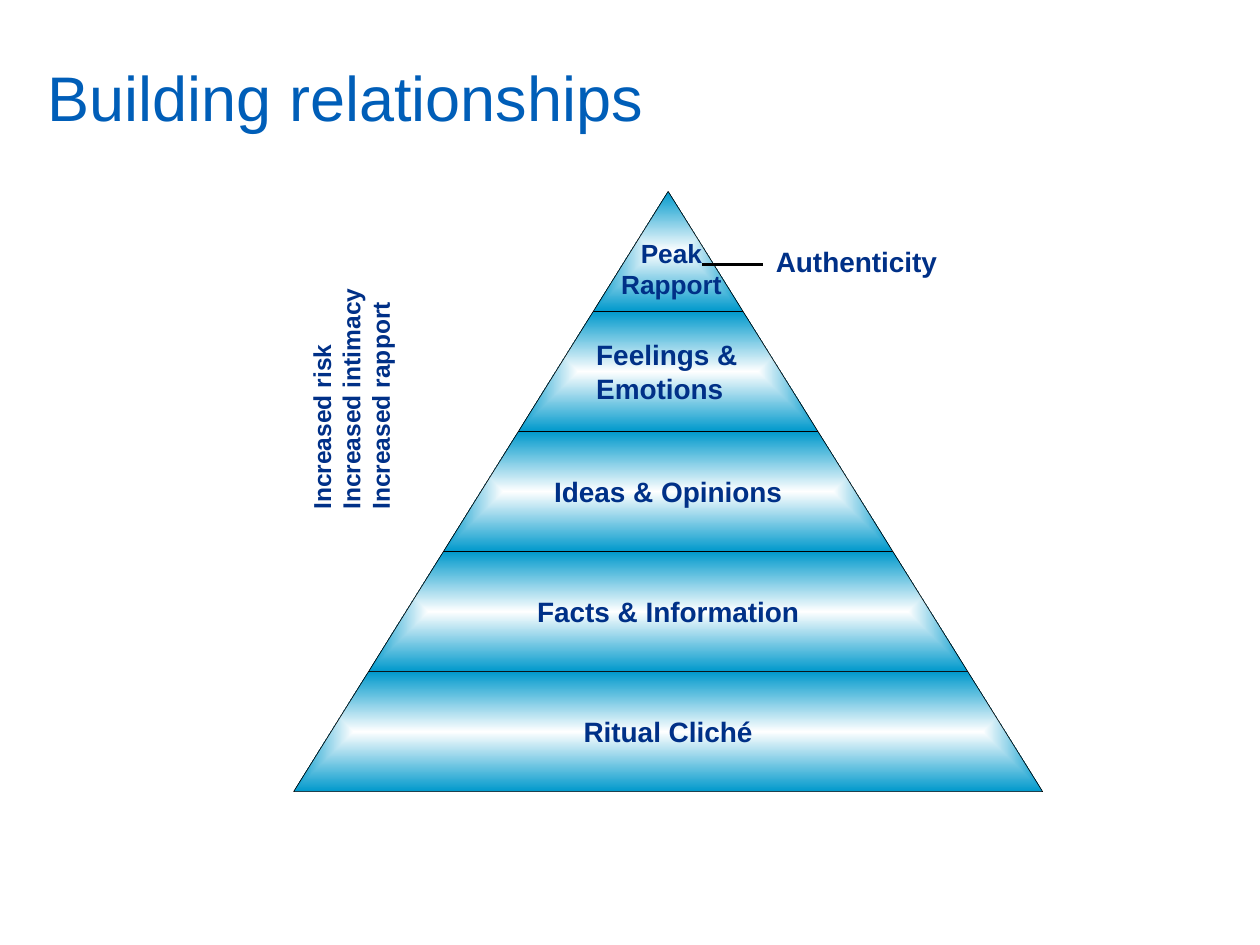
from lxml.etree import SubElement
from pptx import Presentation
from pptx.dml.color import RGBColor
from pptx.enum.shapes import MSO_CONNECTOR
from pptx.enum.text import MSO_ANCHOR, PP_ALIGN
from pptx.oxml.ns import qn
from pptx.util import Cm, Pt

COLORS = {"title": "005EB8", "text": "003087", "line": "000000",
          "core": "FFFFFF", "edge": "0099CC"}
FONT = "Arial"
MID, TOP = 13.47, 3.86      # apex of the pyramid, in cm
STEP, RISE = 1.51, 2.42     # half-width and height gained per tier, in cm
TIERS = ["", "Feelings & Emotions", "Ideas & Opinions",
         "Facts & Information", "Ritual Cliché"]


def color(name):
    return RGBColor.from_string(COLORS[name])


def place(shape, left, top, width, height):
    shape.left, shape.top = Cm(left), Cm(top)
    shape.width, shape.height = Cm(width), Cm(height)


def write(frame, lines, size, align=PP_ALIGN.LEFT, tint="text", bold=True):
    frame.word_wrap = True
    frame.text = "\n".join(lines)
    for para in frame.paragraphs:
        para.alignment = align
        font = para.font
        font.name, font.size, font.bold = FONT, Pt(size), bold
        font.color.rgb = color(tint)


def glow(shape):
    """Fill with a gradient that runs from the centre to the edges."""
    shape.fill.gradient()
    for stop, name in zip(shape.fill.gradient_stops, ("core", "edge")):
        stop.color.rgb = color(name)
    grad = shape._element.spPr.find(qn("a:gradFill"))
    grad.remove(grad.find(qn("a:lin")))
    route = SubElement(grad, qn("a:path"), {"path": "shape"})
    SubElement(route, qn("a:fillToRect"), dict.fromkeys("ltrb", "50000"))


def add_tier(slide, rank, label):
    high, low = TOP + rank * RISE, TOP + (rank + 1) * RISE
    near, far = rank * STEP, (rank + 1) * STEP
    points = [(MID - near, high), (MID + near, high),
              (MID + far, low), (MID - far, low)]
    points = [(Cm(x), Cm(y)) for x, y in points]
    pen = slide.shapes.build_freeform(*points[0])
    pen.add_line_segments(points[1:])
    tier = pen.convert_to_shape()
    tier.shadow.inherit = False
    glow(tier)
    tier.line.color.rgb = color("line")
    tier.line.width = Pt(0.37)
    if label:
        frame = tier.text_frame
        frame.vertical_anchor = MSO_ANCHOR.MIDDLE
        wraps = rank == 1
        write(frame, [label], 16, PP_ALIGN.LEFT if wraps else PP_ALIGN.CENTER)
        if wraps:
            frame.margin_left, frame.margin_right = Cm(1.57), Cm(1)


def add_note(slide, box, lines, size, align=PP_ALIGN.LEFT, turn=0):
    note = slide.shapes.add_textbox(*map(Cm, box))
    note.rotation = turn
    write(note.text_frame, lines, size, align)


def add_rule(slide, left, right, top):
    rule = slide.shapes.add_connector(
        MSO_CONNECTOR.STRAIGHT, Cm(left), Cm(top), Cm(right), Cm(top))
    rule.line.color.rgb = color("line")
    rule.line.width = Pt(1.5)
    SubElement(rule._element.spPr, qn("a:effectLst"))


def add_title(slide, text):
    title = slide.shapes.title
    place(title, 0.71, 0.74, 23.04, 2.39)
    title.text_frame.vertical_anchor = MSO_ANCHOR.MIDDLE
    write(title.text_frame, [text], 36, tint="title", bold=False)


def main():
    deck = Presentation()
    deck.slide_width, deck.slide_height = Cm(25.4), Cm(19.05)
    slide = deck.slides.add_slide(deck.slide_layouts[5])
    add_title(slide, "Building relationships")
    for rank, label in enumerate(TIERS):
        add_tier(slide, rank, label)
    add_note(slide, (12.19, 4.65, 2.69, 1.6), ["Peak Rapport"], 15,
             PP_ALIGN.CENTER)
    add_note(slide, (15.39, 4.8, 4.14, 1.02), ["Authenticity"], 16)
    add_rule(slide, 14.15, 15.39, 5.33)
    add_note(slide, (4.14, 6.55, 5.89, 2.06),
             ["Increased risk", "Increased intimacy", "Increased rapport"],
             14, turn=270)
    deck.save("out.pptx")


if __name__ == "__main__":
    main()
